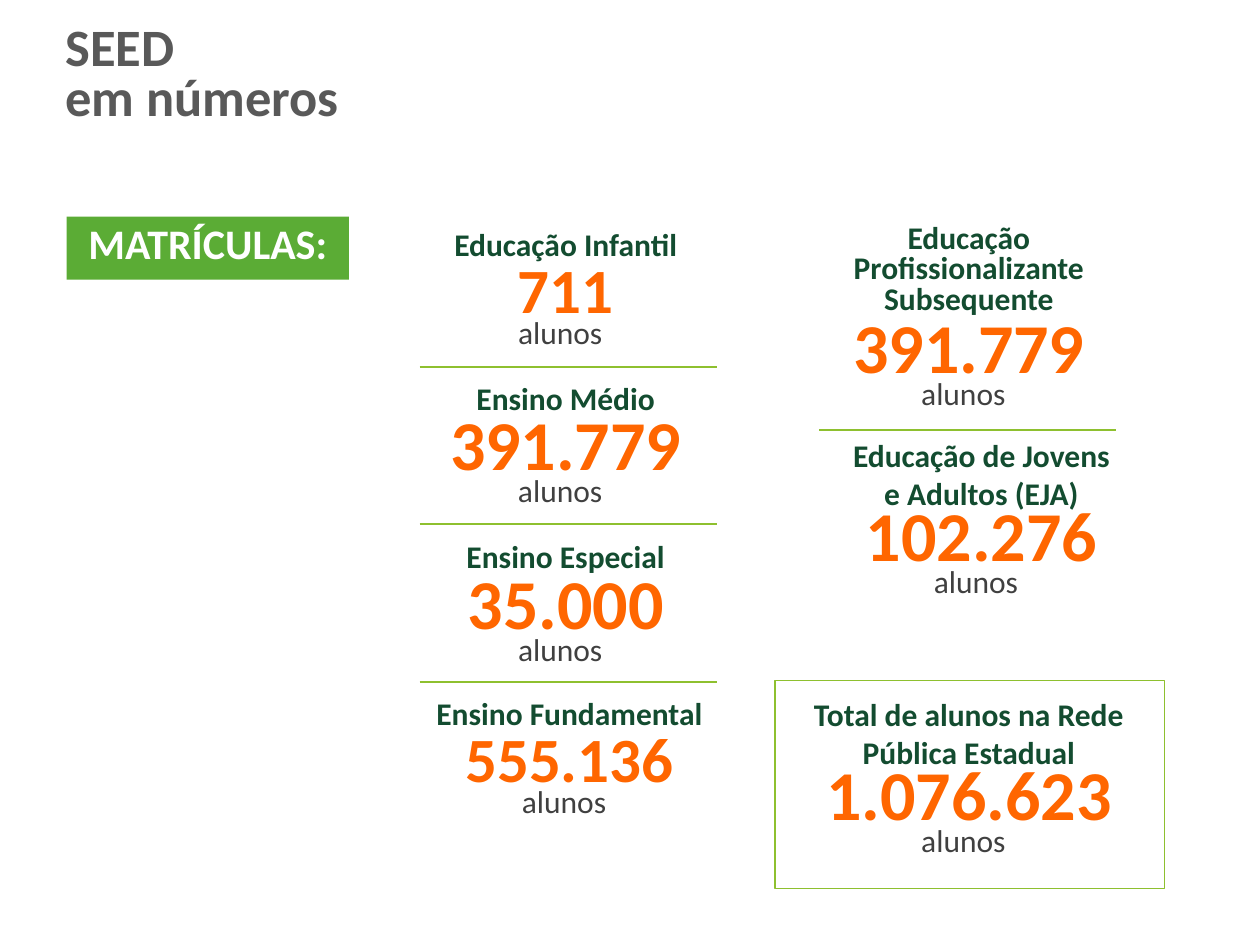
from dataclasses import dataclass

import pptx
import pptx.dml.color
import pptx.enum.shapes
import pptx.enum.text
import pptx.oxml.ns
import pptx.util
from lxml import etree

Inches = pptx.util.Inches
ALIGN = pptx.enum.text.PP_ALIGN
ANCHOR = pptx.enum.text.MSO_ANCHOR
RECTANGLE = pptx.enum.shapes.MSO_SHAPE.RECTANGLE


@dataclass(frozen=True)
class Theme:
    font: str = "Calibri"
    title: str = "595959"
    banner: str = "5BAC35"
    white: str = "FFFFFF"
    label: str = "134C30"
    figure: str = "FF6600"
    unit: str = "404040"
    rule: str = "8EC02F"
    title_size: int = 30
    banner_size: int = 24
    label_size: int = 18
    figure_size: int = 40
    small_figure_size: int = 36
    spacer_size: int = 28


def rgb(value):
    return pptx.dml.color.RGBColor.from_string(value)


def add_text(paragraph, text, *, font, size, color, bold=False):
    run = paragraph.add_run()
    run.text = text
    run.font.name = font
    run.font.size = pptx.util.Pt(size)
    run.font.bold = bold
    run.font.color.rgb = rgb(color)


class EnrolmentSlide:
    def __init__(self, slide, theme):
        self.slide = slide
        self.theme = theme

    def text_box(self, left, top, width, height, wrap=True, anchor=ANCHOR.TOP):
        box = self.slide.shapes.add_textbox(
            Inches(left), Inches(top), Inches(width), Inches(height))
        box.text_frame.word_wrap = wrap
        box.text_frame.vertical_anchor = anchor
        return box.text_frame

    def lines(self, frame, texts, size, color, align=ALIGN.CENTER, spacing=1.0):
        for index, text in enumerate(texts):
            paragraph = frame.add_paragraph() if index else frame.paragraphs[0]
            paragraph.alignment = align
            paragraph.line_spacing = spacing
            for number, part in enumerate(text.split("\n")):
                if number:
                    paragraph.add_line_break()
                add_text(paragraph, part, font=self.theme.font, size=size,
                         color=color, bold=True)

    def rectangle(self, left, top, width, height, fill=None, line=None):
        shape = self.slide.shapes.add_shape(
            RECTANGLE, Inches(left), Inches(top), Inches(width), Inches(height))
        shape.shadow.inherit = False
        if fill:
            shape.fill.solid()
            shape.fill.fore_color.rgb = rgb(fill)
        else:
            shape.fill.background()
        if line:
            shape.line.color.rgb = rgb(line)
            shape.line.width = pptx.util.Pt(0.75)
        else:
            shape.line.fill.background()

    def rule(self, left, top, width=2.36):
        line = self.slide.shapes.add_connector(
            pptx.enum.shapes.MSO_CONNECTOR.STRAIGHT,
            Inches(left), Inches(top), Inches(left + width), Inches(top))
        line.line.color.rgb = rgb(self.theme.rule)
        line.line.width = pptx.util.Pt(1)
        etree.SubElement(line._element.spPr, pptx.oxml.ns.qn("a:effectLst"))

    def label(self, center, top, width, height, texts, spacing=1.0):
        frame = self.text_box(center - width / 2, top, width, height)
        self.lines(frame, texts, self.theme.label_size, self.theme.label,
                   spacing=spacing)

    def figure(self, center, top, width, value, size):
        theme = self.theme
        frame = self.text_box(center - width / 2, top, width, 0.71, wrap=False)
        self.lines(frame, [value], size, theme.figure, spacing=0.5)
        unit = frame.add_paragraph()
        unit.alignment = ALIGN.CENTER
        unit.line_spacing = 0.5
        add_text(unit, "alunos", font=theme.font, size=theme.label_size,
                 color=theme.unit)
        # The larger trailing space sets the height of the unit line
        add_text(unit, " ", font=theme.font, size=theme.spacer_size,
                 color=theme.unit)


def main():
    theme = Theme()
    deck = pptx.Presentation()
    deck.slide_width, deck.slide_height = Inches(10), Inches(7.5)
    page = EnrolmentSlide(deck.slides.add_slide(deck.slide_layouts[6]), theme)

    # Title and banner
    title = page.text_box(0.42, 0.11, 3.09, 0.99, anchor=ANCHOR.MIDDLE)
    page.lines(title, ["SEED\nem números"], theme.title_size, theme.title,
               align=ALIGN.LEFT, spacing=0.8)
    page.rectangle(0.53, 1.72, 2.24, 0.5, fill=theme.banner)
    banner = page.text_box(0.53, 1.68, 2.24, 0.5)
    page.lines(banner, ["MATRÍCULAS:"], theme.banner_size, theme.white)

    # Rules between the stages
    for index in range(3):
        page.rule(3.33, 2.91 + 1.25 * index)
    page.rule(6.5, 3.41)

    # Stages: center, label top, width, height, label lines, label spacing,
    # figure top, figure width, figure, figure size
    big, small = theme.figure_size, theme.small_figure_size
    stages = [
        (4.49, 1.74, 2.27, 0.4, ["Educação Infantil"], 1.0, 2.2, 0.97, "711", small),
        (4.49, 2.96, 2.27, 0.4, ["Ensino Médio"], 1.0, 3.42, 2.06, "391.779", big),
        (4.49, 4.21, 2.27, 0.4, ["Ensino Especial"], 1.0, 4.68, 1.77, "35.000", big),
        (4.52, 5.46, 2.49, 0.4, ["Ensino Fundamental"], 1.0, 5.92, 1.87, "555.136", small),
        (7.69, 1.74, 2.27, 0.84, ["Educação Profissionalizante Subsequente"], 0.8,
         2.65, 2.06, "391.779", big),
        (7.79, 3.41, 2.27, 0.71, ["Educação de Jovens", "e Adultos (EJA)"], 1.0,
         4.14, 2.06, "102.276", big),
        (7.69, 5.47, 2.67, 0.71, ["Total de alunos na Rede Pública Estadual"], 1.0,
         6.2, 2.49, "1.076.623", big),
    ]
    for center, top, width, height, texts, spacing, *figure in stages:
        page.label(center, top, width, height, texts, spacing)
        page.figure(center, *figure)

    # Frame around the total
    page.rectangle(6.15, 5.4, 3.09, 1.65, line=theme.rule)

    deck.save("out.pptx")


if __name__ == "__main__":
    main()
